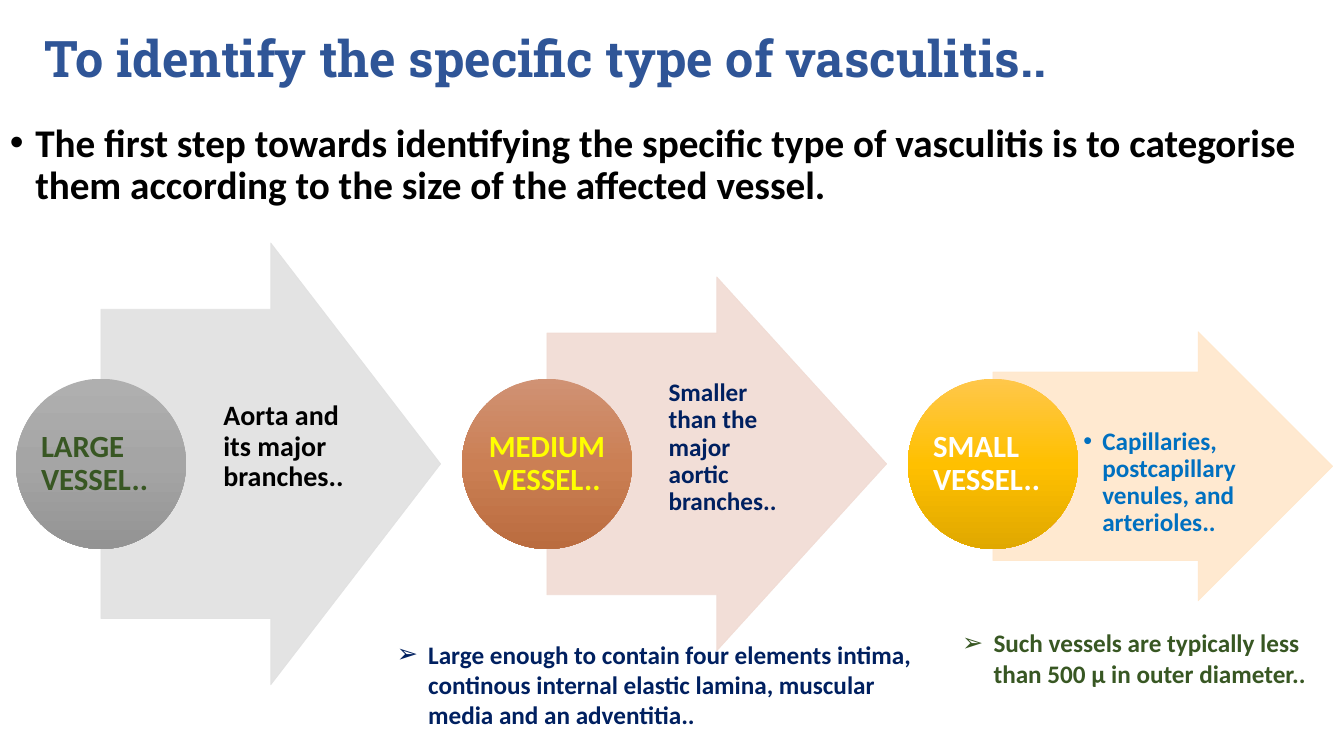
"""Build the slide that sorts vasculitis by the size of the affected vessel."""
from lxml.etree import SubElement
from pptx import Presentation
from pptx.dml.color import RGBColor
from pptx.enum.shapes import MSO_SHAPE as Preset
from pptx.enum.text import MSO_ANCHOR as Anchor, PP_ALIGN as Align
from pptx.oxml.ns import qn
from pptx.util import Cm, Pt

BLUE = RGBColor(0x2F, 0x55, 0x97)
BLACK = RGBColor(0, 0, 0)
WHITE = RGBColor(0xFF, 0xFF, 0xFF)
GREEN = RGBColor(0x38, 0x57, 0x23)
NAVY = RGBColor(0x00, 0x20, 0x60)
SKY = RGBColor(0x00, 0x70, 0xC0)
YELLOW = RGBColor(0xFF, 0xFF, 0x00)
PALE_GREY = RGBColor(0xE1, 0xE1, 0xE1)
PALE_ORANGE = RGBColor(0xF1, 0xDB, 0xD3)
PALE_GOLD = RGBColor(0xFF, 0xE7, 0xCB)
GREYS = [RGBColor(0xAF, 0xAF, 0xAF), RGBColor(0xA5, 0xA5, 0xA5), RGBColor(0x93, 0x93, 0x93)]
ORANGES = [RGBColor(0xD0, 0x92, 0x74), RGBColor(0xCB, 0x7F, 0x54), RGBColor(0xBA, 0x6C, 0x3F)]
GOLDS = [RGBColor(0xFF, 0xC7, 0x4B), RGBColor(0xFF, 0xC0, 0x00), RGBColor(0xE0, 0xA8, 0x00)]


def write(holder, text, size, color, font="Calibri", spacing=0.9, anchor=Anchor.MIDDLE,
          insets=(0.25, 0.13, 0.25, 0.13), indent=0, bullet=None, align=Align.LEFT):
    """Fill a text holder with one formatted paragraph."""
    frame = holder.text_frame
    sides = ("margin_left", "margin_top", "margin_right", "margin_bottom")
    frame_format = dict(zip(sides, map(Cm, insets)), word_wrap=True, vertical_anchor=anchor)
    for key, value in frame_format.items():
        setattr(frame, key, value)
    paragraph = frame.paragraphs[0]
    paragraph.alignment, paragraph.line_spacing = align, spacing
    run = paragraph.add_run()
    run.text = text
    for key, value in {"name": font, "size": Pt(size), "bold": True}.items():
        setattr(run.font, key, value)
    run.font.color.rgb = color
    properties = paragraph._p.get_or_add_pPr()
    properties.set("marL", str(Cm(indent)))
    if bullet:
        properties.set("indent", str(-Cm(indent)))
        SubElement(properties, qn("a:buFont"), typeface="Arial")
        SubElement(properties, qn("a:buChar"), char=bullet)


def set_alpha(paint):
    """Make a solid paint 90 % opaque."""
    color = paint._xPr.find(qn("a:solidFill"))[0]
    SubElement(color, qn("a:alpha"), val="90000")


deck = Presentation()
deck.slide_width, deck.slide_height = Cm(33.87), Cm(19.05)
slide = deck.slides.add_slide(deck.slide_layouts[5])

title = slide.shapes.title
title_place = {"left": 0.86, "top": 0.81, "width": 31.9, "height": 1.47}
for key, value in title_place.items():
    setattr(title, key, Cm(value))
write(title, "To identify the specific type of vasculitis..", 36, BLUE, font="Roboto Slab")

intro = slide.shapes.add_textbox(Cm(0), Cm(2.98), Cm(33.6), Cm(15.93))
write(intro, "The first step towards identifying the specific type of vasculitis is to categorise "
      "them according to the size of the affected vessel.", 28, BLACK,
      anchor=Anchor.TOP, indent=0.64, bullet="•")

LEFT, PITCH = 0.4, 11.24
CIRCLE, LABEL, ARROW_WIDTH, DETAIL_WIDTH = 4.29, 3.1, 8.56, 4.17
CIRCLE_MIDDLE = 11.69
vessels = [
    ("LARGE VESSEL..", GREEN, Align.LEFT, GREYS, PALE_GREY, 11.69, 11.13,
     "Aorta and its major branches..",
     {"size": 20, "color": BLACK, "insets": (0.15, 0.03, 0.08, 0.88), "indent": 0.79}),
    ("MEDIUM VESSEL..", YELLOW, Align.CENTER, ORANGES, PALE_ORANGE, 11.69, 9.42,
     "Smaller than the major aortic branches..",
     {"size": 18, "color": NAVY, "insets": (0.13, 0.03, 0.08, 0.83), "indent": 0.79}),
    ("SMALL VESSEL..", WHITE, Align.LEFT, GOLDS, PALE_GOLD, 11.75, 6.78,
     "Capillaries, postcapillary venules, and arterioles..",
     {"size": 18, "color": SKY, "insets": (0.13, 0.86, 0.08, 0.03), "indent": 0.48,
      "bullet": "•"}),
]
diagram = slide.shapes.add_group_shape().shapes
for column, vessel in enumerate(vessels):
    name, name_color, align, shades, pale, middle, height, detail, style = vessel
    left = LEFT + column * PITCH
    arrow = diagram.add_shape(Preset.RIGHT_ARROW, Cm(left + CIRCLE / 2), Cm(middle - height / 2),
                              Cm(ARROW_WIDTH), Cm(height))
    arrow.shadow.inherit = False
    arrow.adjustments[0], arrow.adjustments[1] = 0.7, 0.5
    arrow.line.width = Pt(0.5)
    for paint in (arrow.fill, arrow.line.fill):
        paint.solid()
        paint.fore_color.rgb = pale
        set_alpha(paint)

    detail_height = 0.7 * height
    detail_box = diagram.add_textbox(Cm(left + CIRCLE), Cm(middle - detail_height / 2),
                                     Cm(DETAIL_WIDTH), Cm(detail_height))
    write(detail_box, detail, **style)

    circle = diagram.add_shape(Preset.OVAL, Cm(left), Cm(CIRCLE_MIDDLE - CIRCLE / 2),
                               Cm(CIRCLE), Cm(CIRCLE))
    circle.shadow.inherit = False
    circle.line.fill.background()
    circle.fill.gradient()
    circle.fill.gradient_angle = 270
    stops = circle.fill._xPr.find(qn("a:gradFill")).find(qn("a:gsLst"))
    stops.clear()
    for position, shade in zip((0, 50000, 100000), shades):
        stop = SubElement(stops, qn("a:gs"), pos=str(position))
        SubElement(stop, qn("a:srgbClr"), val=str(shade))

    label = diagram.add_textbox(Cm(left + (CIRCLE - LABEL) / 2), Cm(CIRCLE_MIDDLE - LABEL / 2),
                                Cm(LABEL), Cm(LABEL))
    write(label, name, 22, name_color, insets=(0.04,) * 4, align=align)

notes = [
    ("Such vessels are typically less than 500 μ in outer diameter..",
     GREEN, (24, 15.69, 9.19, 1.8)),
    ("Large enough to contain four elements intima, continous internal elastic lamina, "
     "muscular media and an adventitia..", NAVY, (9.75, 15.97, 14.12, 3.33)),
]
for text, color, place in notes:
    note = slide.shapes.add_textbox(*map(Cm, place))
    write(note, text, 18, color, spacing=1.0, anchor=Anchor.TOP, indent=0.79, bullet="➢")

deck.save("out.pptx")
